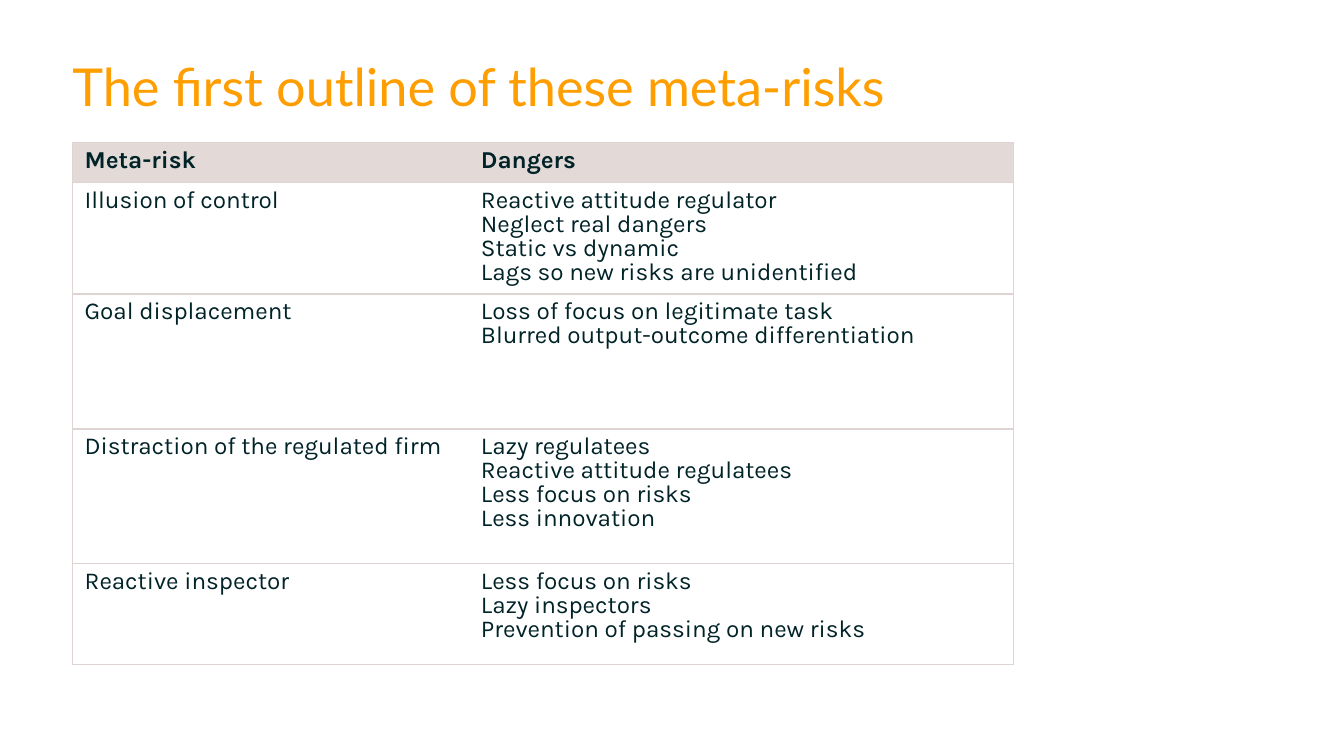
from lxml import etree
from pptx import Presentation, util as u
from pptx.dml.color import RGBColor
from pptx.enum import text
from pptx.oxml import ns

COLORS = {"title": "FF9E00", "ink": "002328", "border": "DED5D3", "header": "E3D9D7", "body": "FFFFFF"}
TITLE = {"name": "Lato", "size": u.Pt(28), "bold": False}
HEADER = {"name": "Karla", "size": u.Pt(13), "bold": True}
BODY = {**HEADER, "bold": False}

ROWS = [
    ("Meta-risk", ["Dangers"], 0.76),
    ("Illusion of control", ["Reactive attitude regulator", "Neglect real dangers", "Static vs dynamic",
                             "Lags so new risks are unidentified"], 2.1),
    ("Goal displacement", ["Loss of focus on legitimate task", "Blurred output-outcome differentiation"], 2.55),
    ("Distraction of the regulated firm", ["Lazy regulatees", "Reactive attitude regulatees",
                                           "Less focus on risks", "Less innovation"], 2.55),
    ("Reactive inspector", ["Less focus on risks", "Lazy inspectors", "Prevention of passing on new risks"], 1.91),
]
COLUMN_WIDTHS = [7.49, 10.29]


def write_lines(frame, lines, style, color, spacing):
    for index, line in enumerate(lines):
        para = frame.add_paragraph() if index else frame.paragraphs[0]
        para.line_spacing = u.Pt(spacing)
        span = para.add_run()
        span.text = line
        for name, value in style.items():
            setattr(span.font, name, value)
        span.font.color.rgb = RGBColor.from_string(COLORS[color])


def add_border(cell, side, visible):
    line = etree.SubElement(cell._tc.get_or_add_tcPr(), ns.qn(f"a:ln{side}"), w=str(u.Pt(0.75)))
    if visible:
        fill = etree.SubElement(line, ns.qn("a:solidFill"))
        etree.SubElement(fill, ns.qn("a:srgbClr"), val=COLORS["border"])
    else:
        etree.SubElement(line, ns.qn("a:noFill"))


deck = Presentation()
deck.slide_width, deck.slide_height = u.Cm(25.4), u.Cm(14.29)
page = deck.slides.add_slide(deck.slide_layouts[6])

box = page.shapes.add_textbox(u.Cm(1.37), u.Cm(1.09), u.Cm(22.71), u.Cm(1.6))
frame_format = {"margin_left": 0, "margin_top": 0, "margin_right": 0, "margin_bottom": 0,
                "word_wrap": True, "vertical_anchor": text.MSO_ANCHOR.TOP}
for name, value in frame_format.items():
    setattr(box.text_frame, name, value)
write_lines(box.text_frame, ["The first outline of these meta-risks"], TITLE, "title", 32)

table = page.shapes.add_table(len(ROWS), len(COLUMN_WIDTHS), u.Cm(1.37), u.Cm(2.69),
                              u.Cm(sum(COLUMN_WIDTHS)), u.Cm(sum(row[2] for row in ROWS))).table
table.horz_banding = False
for column, width in zip(table.columns, COLUMN_WIDTHS):
    column.width = u.Cm(width)

cell_format = {"margin_left": u.Cm(0.23), "margin_right": u.Cm(0.23), "margin_top": u.Cm(0.15),
               "margin_bottom": u.Cm(0.15), "vertical_anchor": text.MSO_ANCHOR.TOP}
for row_index, (risk, dangers, height) in enumerate(ROWS):
    table.rows[row_index].height = u.Cm(height)
    style, fill_color = (BODY, "body") if row_index else (HEADER, "header")
    for column_index, lines in enumerate([[risk], dangers]):
        cell = table.cell(row_index, column_index)
        for name, value in cell_format.items():
            setattr(cell, name, value)
        write_lines(cell.text_frame, lines, style, "ink", 12.8)
        for side, visible in {"L": column_index == 0, "R": column_index == 1, "T": True, "B": True}.items():
            add_border(cell, side, visible)
        cell.fill.solid()
        cell.fill.fore_color.rgb = RGBColor.from_string(COLORS[fill_color])

deck.save("out.pptx")
